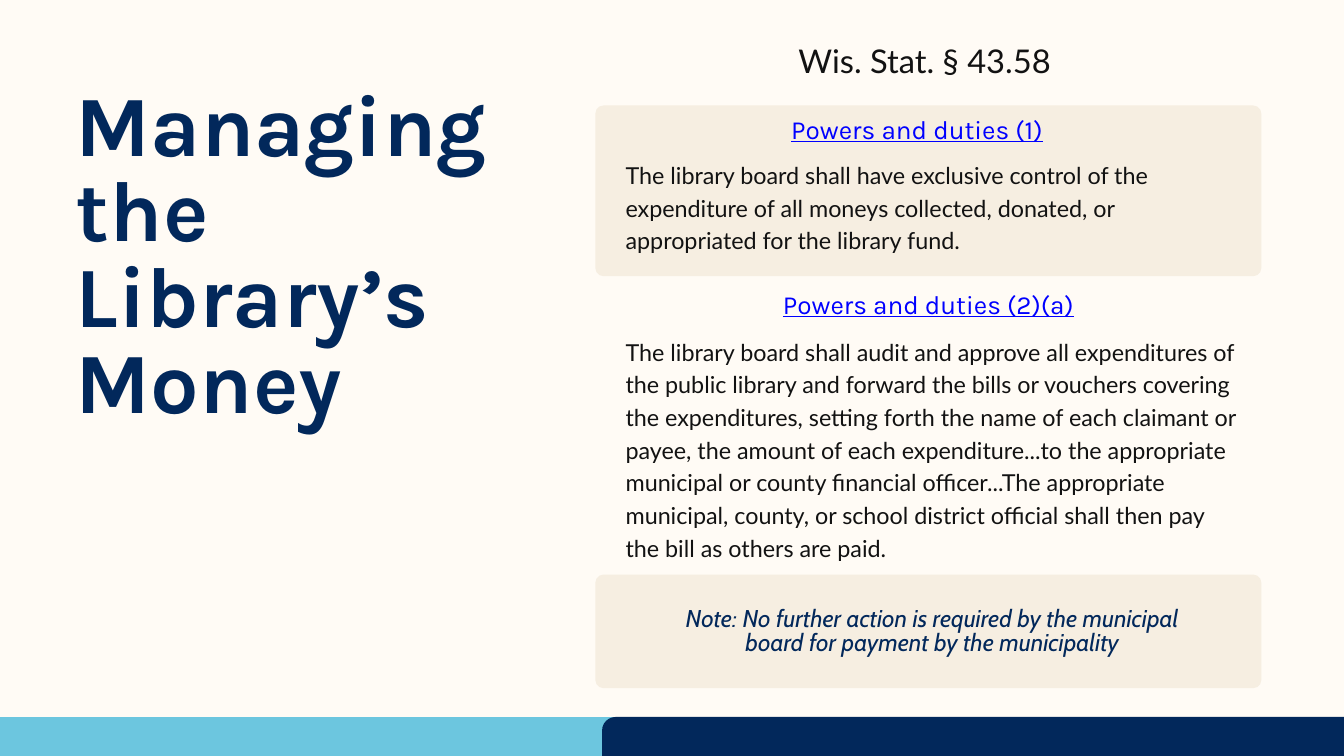
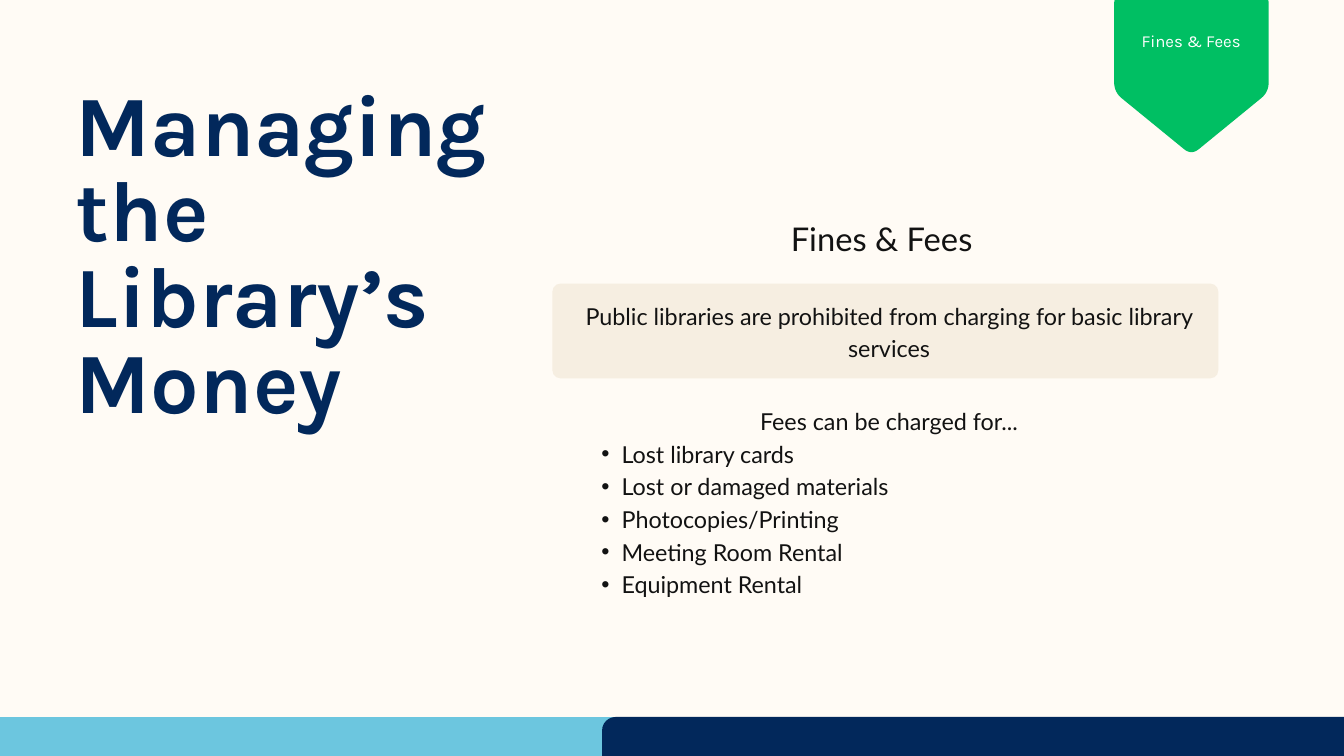
from lxml import etree
from pptx import Presentation
from pptx.dml.color import RGBColor
from pptx.enum.shapes import MSO_SHAPE
from pptx.enum.text import MSO_ANCHOR, MSO_AUTO_SIZE, PP_ALIGN
from pptx.oxml.ns import qn
from pptx.util import Inches, Pt

LEFT, CENTER = PP_ALIGN.LEFT, PP_ALIGN.CENTER
TOP, MIDDLE = MSO_ANCHOR.TOP, MSO_ANCHOR.MIDDLE
RECTANGLE, ROUNDED = MSO_SHAPE.RECTANGLE, MSO_SHAPE.ROUNDED_RECTANGLE
NO_AUTOFIT = MSO_AUTO_SIZE.NONE
TITLE_ONLY, TITLE_AND_CONTENT = 5, 1

CREAM, SAND, INK = "FFFBF5", "F6EEE1", "121212"
NAVY, SKY, GREEN = "02285B", "6CC6DF", "00BF63"
LINK_BLUE, WHITE = "0000FF", "FFFFFF"

# Text styles: font, size, line spacing, colour, alignment
TITLE = dict(font="Karla", size=92, spacing=92, color=NAVY, bold=True)
TOPIC = dict(font="Lato", size=35, spacing=49, color=INK, align=CENTER)
SECTION = dict(font="Karla", size=28, spacing=28, color=LINK_BLUE,
               align=CENTER, underline=True)
BODY = dict(font="Lato", size=25, spacing=35, color=INK)
CENTERED_BODY = dict(BODY, align=CENTER)
NOTE = dict(font="Cabin", size=26, spacing=26, color=NAVY, align=CENTER,
            italic=True)
LABEL = dict(font="Karla", size=18, spacing=25.2, color=WHITE, align=CENTER)

# Shared parts; the footer bands bleed off the page edges
HEADING = "Managing the Library’s Money"
HEADING_BOX = (1.13, 1.3, 7.51, 5.15)
SKY_BAND = (-1.01, 10.67, 16.11, 1.95)
NAVY_BAND = (8.96, 10.67, 14.06, 1.56)

# Content: (text, style, (left, top, width, height))
STATUTE_PANELS = [(8.86, 1.57, 9.91, 2.54), (8.86, 8.55, 9.91, 1.69)]
STATUTE_TEXTS = [
    ("Wis. Stat. § 43.58", TOPIC, (9.41, 0.51, 8.7, 0.65)),
    ("Powers and duties (1)", SECTION, (11.55, 1.76, 4.19, 0.41)),
    ("The library board shall have exclusive control of the expenditure of "
     "all moneys collected, donated, or appropriated for the library fund.",
     BODY, (9.31, 2.33, 9.14, 1.42)),
    ("Powers and duties (2)(a)", SECTION, (11.55, 4.37, 4.53, 0.41)),
    ("The library board shall audit and approve all expenditures of the "
     "public library and forward the bills or vouchers covering the "
     "expenditures, setting forth the name of each claimant or payee, the "
     "amount of each expenditure...to the appropriate municipal or county "
     "financial officer...The appropriate municipal, county, or school "
     "district official shall then pay the bill as others are paid.",
     BODY, (9.31, 4.96, 9.14, 3.34)),
    ("Note: No further action is required by the municipal board for payment "
     "by the municipality", NOTE, (9.75, 9.05, 8.25, 0.73)),
]

FEES_PANELS = [(8.22, 4.22, 9.91, 1.41)]
FEES_TEXTS = [
    ("Fines & Fees", TOPIC, (8.77, 3.16, 8.7, 0.65)),
    ("Public libraries are prohibited from charging for basic library "
     "services", CENTERED_BODY, (8.66, 4.42, 9.14, 0.94)),
]
FEES_LEAD = "Fees can be charged for..."
FEES = ["Lost library cards", "Lost or damaged materials",
        "Photocopies/Printing", "Meeting Room Rental", "Equipment Rental"]
FEES_BOX = (8.66, 5.99, 9.14, 2.86)
TAG_TEXT = "Fines & Fees"
TAG_BOX = (16.58, 0.2, 2.29, 0.75)


def rgb(value):
    return RGBColor.from_string(value)


def inches(values):
    return [Inches(value) for value in values]


def paint(shape, color):
    shape.shadow.inherit = False
    shape.fill.solid()
    shape.fill.fore_color.rgb = rgb(color)
    shape.line.fill.background()


def add_block(page, kind, box, color, radius=0):
    shape = page.shapes.add_shape(kind, *inches(box))
    paint(shape, color)
    if radius:
        shape.adjustments[0] = radius / min(box[2:])


def style_paragraph(para, font, size, spacing, color, align=LEFT, bold=False,
                    italic=False, underline=False):
    para.alignment = align
    para.line_spacing = Pt(spacing)
    para.space_before = Pt(0)
    for span in para.runs:
        span.font.name = font
        span.font.size = Pt(size)
        span.font.color.rgb = rgb(color)
        span.font.bold = bold
        span.font.italic = italic
        span.font.underline = underline


def set_bullet(para, character=None, margin=0, indent=0):
    props = para._p.get_or_add_pPr()
    props.set("marL", str(Inches(margin)))
    props.set("indent", str(Inches(indent)))
    if character:
        etree.SubElement(props, qn("a:buFont"), typeface="Arial")
        etree.SubElement(props, qn("a:buChar"), char=character)
    else:
        etree.SubElement(props, qn("a:buNone"))


def prepare_frame(shape, box, text, anchor=TOP):
    shape.left, shape.top, shape.width, shape.height = inches(box)
    frame = shape.text_frame
    frame.word_wrap = True
    frame.auto_size = NO_AUTOFIT
    frame.vertical_anchor = anchor
    frame.margin_left = frame.margin_right = 0
    frame.margin_top = frame.margin_bottom = 0
    frame.text = text
    return frame


def add_text(page, text, style, box, anchor=TOP):
    shape = page.shapes.add_textbox(*inches(box))
    frame = prepare_frame(shape, box, text, anchor)
    style_paragraph(frame.paragraphs[0], **style)


def add_page(deck, layout, panels, texts):
    """Heading, footer bands, sand panels and the texts over them."""
    page = deck.slides.add_slide(deck.slide_layouts[layout])
    frame = prepare_frame(page.shapes.title, HEADING_BOX, HEADING)
    style_paragraph(frame.paragraphs[0], **TITLE)
    add_block(page, RECTANGLE, SKY_BAND, SKY)
    add_block(page, ROUNDED, NAVY_BAND, NAVY, radius=0.2)
    for box in panels:
        add_block(page, ROUNDED, box, SAND, radius=0.12)
    for text, style, box in texts:
        add_text(page, text, style, box)
    return page


def bend(start, corner, end, steps=8):
    """Points of a quadratic curve that rounds off a corner."""
    points = []
    for step in range(steps + 1):
        t = step / steps
        points.append(tuple((1 - t) ** 2 * a + 2 * t * (1 - t) * b + t * t * c
                            for a, b, c in zip(start, corner, end)))
    return points


def add_tag(page):
    left, right, middle = 16.58, 18.88, 17.73
    top_bend = bend((16.73, -0.09), (left, -0.09), (left, 0.06))
    side_bend = bend((left, 1.22), (left, 1.37), (16.69, 1.46))
    tip = bend((17.62, 2.22), (middle, 2.31), (17.84, 2.22))
    left_side = top_bend + side_bend
    right_side = [(left + right - x, y) for x, y in reversed(left_side)]
    start, *outline = [inches(point) for point in left_side + tip + right_side]
    builder = page.shapes.build_freeform(*start)
    builder.add_line_segments(outline, close=True)
    paint(builder.convert_to_shape(), GREEN)
    add_text(page, TAG_TEXT, LABEL, TAG_BOX, MIDDLE)


def add_fee_list(page):
    frame = prepare_frame(page.placeholders[1], FEES_BOX, FEES_LEAD)
    lead = frame.paragraphs[0]
    set_bullet(lead)
    style_paragraph(lead, **CENTERED_BODY)
    for fee in FEES:
        para = frame.add_paragraph()
        para.text = fee
        para.level = 1
        set_bullet(para, "•", margin=0.59, indent=-0.3)
        style_paragraph(para, **BODY)


def main():
    deck = Presentation()
    deck.slide_width, deck.slide_height = inches((20, 11.25))
    background = deck.slide_master.background.fill
    background.solid()
    background.fore_color.rgb = rgb(CREAM)

    # Statute on the board's control of money
    add_page(deck, TITLE_ONLY, STATUTE_PANELS, STATUTE_TEXTS)

    # Fines and fees
    fees_page = add_page(deck, TITLE_AND_CONTENT, FEES_PANELS, FEES_TEXTS)
    add_fee_list(fees_page)
    add_tag(fees_page)

    deck.save("out.pptx")


if __name__ == "__main__":
    main()
